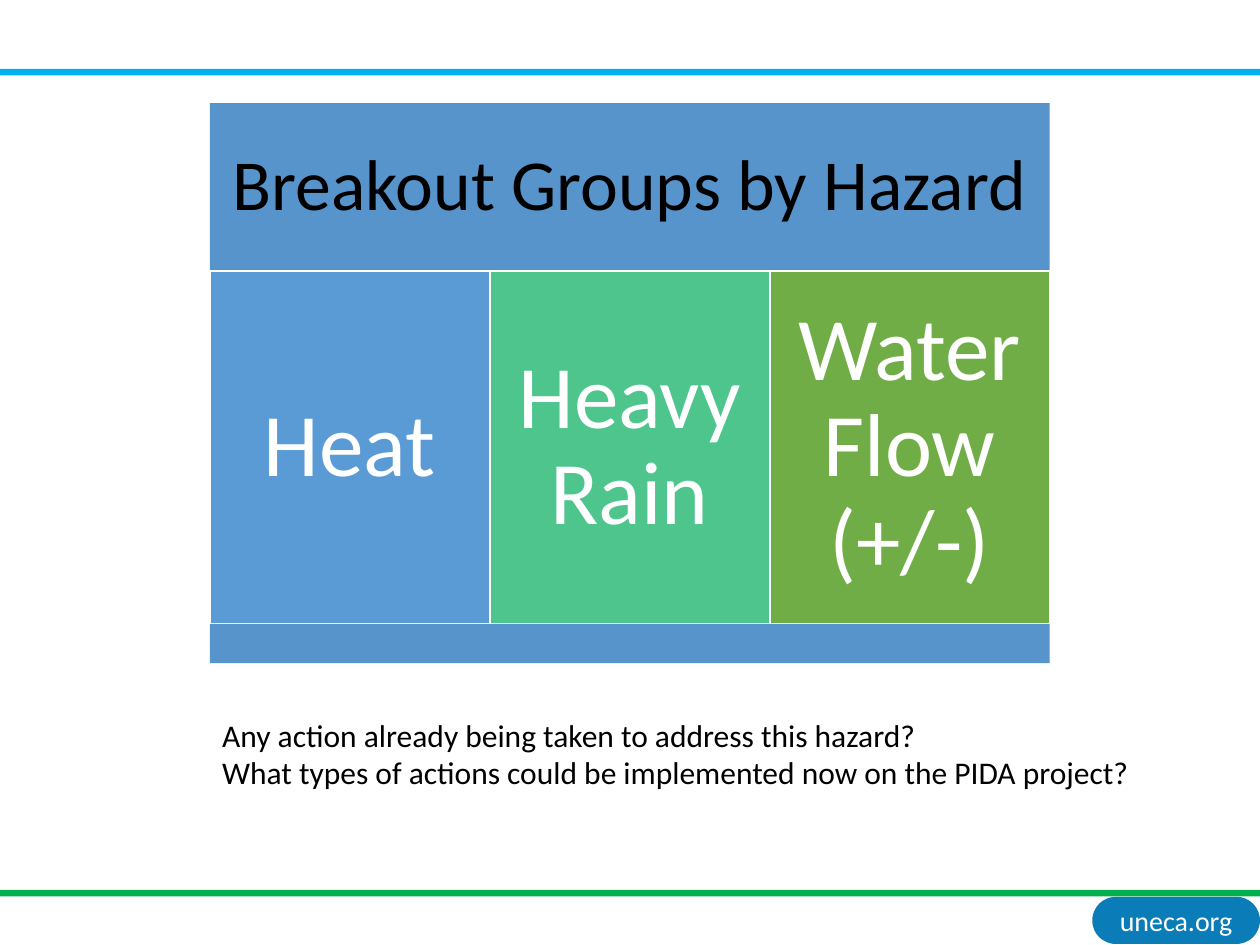
from dataclasses import dataclass

from pptx import Presentation
from pptx.dml.color import RGBColor
from pptx.enum import shapes, text
from pptx.util import Cm, Pt


@dataclass(frozen=True)
class Theme:
    font: str = "Calibri"
    white: str = "FFFFFF"
    black: str = "000000"
    band: str = "5794CB"
    sky: str = "00B0F0"
    green: str = "00B050"
    badge: str = "0A7CB8"
    head: int = 41
    label: int = 51
    body: int = 18
    small: int = 16


@dataclass(frozen=True)
class Box:
    """A filled block; lengths in centimetres, type size in points."""
    left: float
    top: float
    width: float
    height: float
    fill: str
    words: str = ""
    size: int = 0
    color: str = "FFFFFF"
    inset: float = 0
    edge: str = ""
    kind: shapes.MSO_SHAPE = shapes.MSO_SHAPE.RECTANGLE
    lead: float = 0.9


@dataclass(frozen=True)
class Hazard:
    name: str
    fill: str


THEME = Theme()
WIDE, HIGH = 25.4, 19.05
LEFT, TOP, SPAN = 4.23, 2.08, 16.93
HEAD, BODY, FOOT = 3.39, 7.11, 0.79

HAZARDS = [
    Hazard("Heat", "5B9BD5"),
    Hazard("Heavy Rain", "4DC58D"),
    Hazard("Water Flow (+/-)", "70AD47"),
]
ASKS = [
    "Any action already being taken to address this hazard?",
    "What types of actions could be implemented now on the PIDA project?",
]


def style(para, size: int, color: str) -> None:
    para.font.name = THEME.font
    para.font.size = Pt(size)
    para.font.color.rgb = RGBColor.from_string(color)


def draw(slide, box: Box):
    shape = slide.shapes.add_shape(
        box.kind, Cm(box.left), Cm(box.top), Cm(box.width), Cm(box.height))
    shape.shadow.inherit = False
    shape.fill.solid()
    shape.fill.fore_color.rgb = RGBColor.from_string(box.fill)
    if box.edge:
        shape.line.color.rgb = RGBColor.from_string(box.edge)
        shape.line.width = Pt(1)
    else:
        shape.line.fill.background()
    if box.words:
        frame = shape.text_frame
        frame.word_wrap = True
        frame.vertical_anchor = text.MSO_ANCHOR.MIDDLE
        frame.margin_left = frame.margin_right = Cm(box.inset)
        frame.margin_top = frame.margin_bottom = Cm(box.inset)
        para = frame.paragraphs[0]
        para.text = box.words
        para.alignment = text.PP_ALIGN.CENTER
        para.line_spacing = box.lead
        style(para, box.size, box.color)
    return shape


def ask(slide, lines: list[str]) -> None:
    area = slide.shapes.add_textbox(Cm(LEFT), Cm(14.3), Cm(19.02), Cm(1.8))
    frame = area.text_frame
    frame.word_wrap = False
    for i, line in enumerate(lines):
        para = frame.add_paragraph() if i else frame.paragraphs[0]
        para.text = line
        style(para, THEME.body, THEME.black)


def main() -> None:
    deck = Presentation()
    deck.slide_width, deck.slide_height = Cm(WIDE), Cm(HIGH)
    slide = deck.slides.add_slide(deck.slide_layouts[6])

    # Frame: web badge and the two rules
    badge = draw(slide, Box(22.02, 18.08, 3.38, 0.95, THEME.badge, "uneca.org",
                            THEME.small, THEME.white, 0.13,
                            kind=shapes.MSO_SHAPE.ROUNDED_RECTANGLE, lead=1.0))
    badge.adjustments[0] = 0.5
    for top, fill in ((1.39, THEME.sky), (17.94, THEME.green)):
        draw(slide, Box(0, top, WIDE, 0.13, fill))

    # Heading band
    draw(slide, Box(LEFT, TOP, SPAN, HEAD, THEME.band,
                    "Breakout Groups by Hazard", THEME.head, THEME.black, 0.43))

    # One column per hazard
    step = SPAN / len(HAZARDS)
    for i, item in enumerate(HAZARDS):
        draw(slide, Box(LEFT + i * step, TOP + HEAD, step, BODY, item.fill,
                        item.name, THEME.label, THEME.white, 0.53, THEME.white))

    # Closing band and questions
    draw(slide, Box(LEFT, TOP + HEAD + BODY, SPAN, FOOT, THEME.band))
    ask(slide, ASKS)

    deck.save("out.pptx")


if __name__ == "__main__":
    main()
